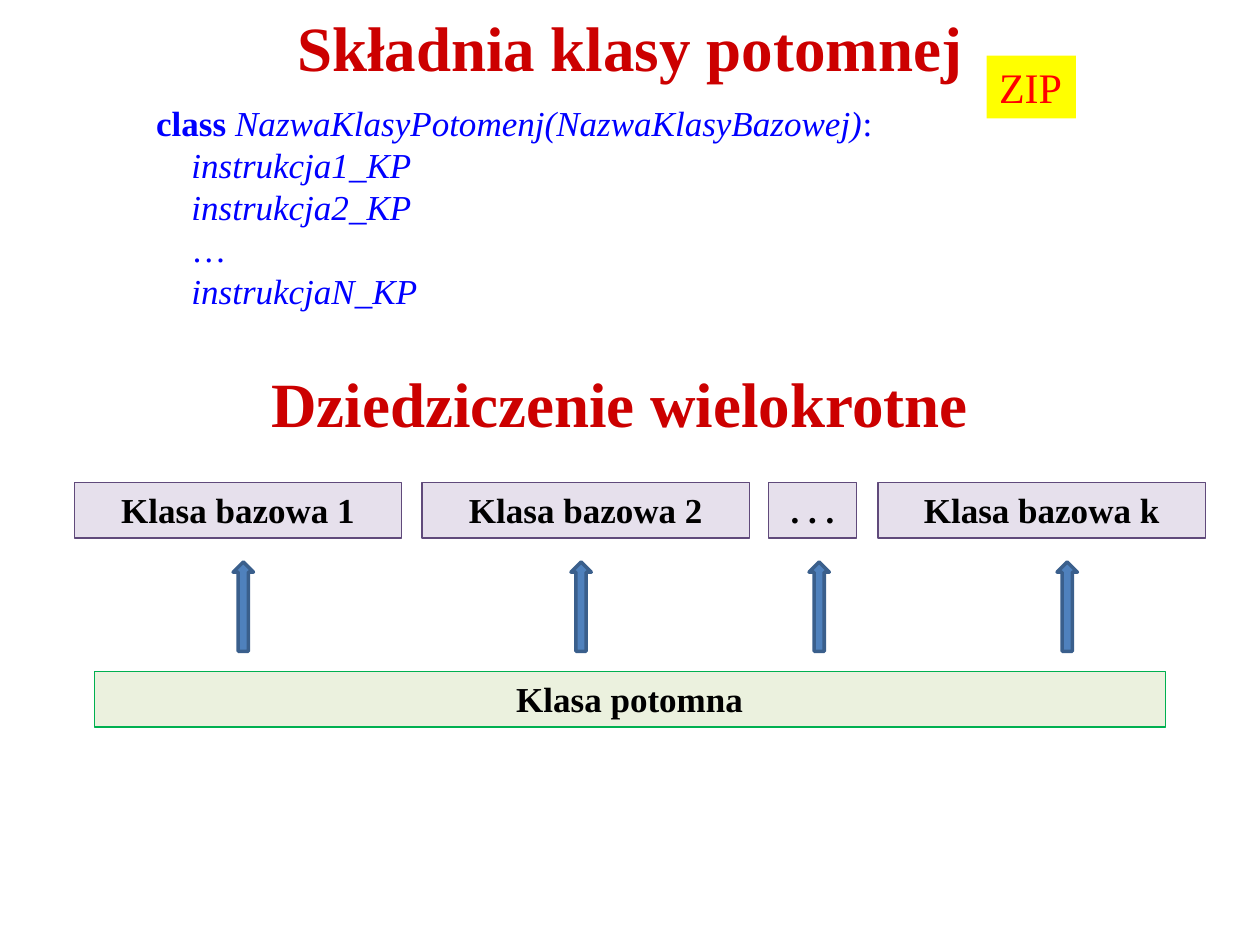
from lxml.etree import SubElement
from pptx import Presentation
from pptx.dml.color import RGBColor as RGB
from pptx.enum.shapes import MSO_SHAPE as Shape
from pptx.enum.text import MSO_ANCHOR as Anchor, PP_ALIGN as Align
from pptx.oxml.ns import qn
from pptx.util import Cm, Pt

RED = RGB(0xCC, 0x00, 0x00)
BRIGHT = RGB(0xFF, 0x00, 0x00)
BLUE = RGB(0x00, 0x00, 0xFF)
BLACK = RGB(0x00, 0x00, 0x00)
YELLOW = RGB(0xFF, 0xFF, 0x00)
LILAC = RGB(0xE6, 0xE0, 0xEC)
PURPLE = RGB(0x60, 0x4A, 0x7B)
PALE = RGB(0xEB, 0xF1, 0xDE)
GREEN = RGB(0x00, 0xB0, 0x50)
STEEL = RGB(0x4F, 0x81, 0xBD)
NAVY = RGB(0x3A, 0x5F, 0x8C)


def add_text(para, text, size=20, color=BLACK, bold=False, italic=False,
             font="Times New Roman"):
    run = para.add_run()
    run.text = text
    style = run.font
    style.name, style.size = font, Pt(size)
    style.bold, style.italic = bold, italic
    style.color.rgb = color


class Board:
    """Holds the current slide and its style."""

    def __init__(self, slide):
        self.shapes = slide.shapes

    def shape(self, kind, left, top, width, height, fill, line=None, weight=0.75):
        item = self.shapes.add_shape(kind, Cm(left), Cm(top), Cm(width), Cm(height))
        item.shadow.inherit = False
        item.fill.solid()
        item.fill.fore_color.rgb = fill
        if line is None:
            item.line.fill.background()
        else:
            item.line.color.rgb = line
            item.line.width = Pt(weight)
        return item

    def box(self, text, left, top, width, height=1.12, fill=LILAC, line=PURPLE,
            align=Align.CENTER, wrap=True, **style):
        frame = self.shape(Shape.RECTANGLE, left, top, width, height,
                           fill, line).text_frame
        frame.word_wrap = wrap
        frame.vertical_anchor = Anchor.TOP
        para = frame.paragraphs[0]
        para.alignment = align
        add_text(para, text, **style)

    def arrow(self, left, top):
        item = self.shape(Shape.UP_ARROW, left, top, 0.41, 1.8, STEEL, NAVY, 2)
        SubElement(item.line._get_or_add_ln(), qn("a:round"))

    def frame(self, left, top, width, height):
        area = self.shapes.add_textbox(Cm(left), Cm(top), Cm(width), Cm(height))
        area.text_frame.word_wrap = True
        area.text_frame.vertical_anchor = Anchor.MIDDLE
        return area.text_frame

    def title(self, text, left, top):
        para = self.frame(left, top, 21.59, 1.19).paragraphs[0]
        para.alignment = Align.CENTER
        add_text(para, text, size=36, color=RED, bold=True)

    def code(self, head, body, left, top, width, height):
        frame = self.frame(left, top, width, height)
        for text, style in head:
            add_text(frame.paragraphs[0], text, color=BLUE, **style)
        for text in body:
            para = frame.add_paragraph()
            para._p.get_or_add_pPr().set("marL", str(Cm(0.71)))
            add_text(para, text, color=BLUE, italic=text != "…")


def main():
    deck = Presentation()
    deck.slide_width, deck.slide_height = Cm(25.4), Cm(19.05)
    board = Board(deck.slides.add_slide(deck.slide_layouts[6]))

    # Syntax of a derived class
    board.title("Składnia klasy potomnej", 1.9, 0.33)
    board.code(
        [("class ", {"bold": True}),
         ("NazwaKlasyPotomenj(NazwaKlasyBazowej)", {"italic": True}),
         (":", {})],
        ["instrukcja1_KP", "instrukcja2_KP", "…", "instrukcjaN_KP"],
        2.9, 1.9, 17.6, 4.52)

    # Multiple inheritance: base classes, each with its arrow
    board.title("Dziedziczenie wielokrotne", 1.7, 7.52)
    bases = [("Klasa bazowa 1", 1.5, 6.6, 4.7),
             ("Klasa bazowa 2", 8.51, 6.6, 11.51),
             (". . .", 15.49, 1.78, 16.31),
             ("Klasa bazowa k", 17.7, 6.6, 21.31)]
    for name, left, width, tip in bases:
        board.box(name, left, 9.73, width, bold=True)
        board.arrow(tip, 11.33)

    # Derived class
    board.box("Klasa potomna", 1.9, 13.54, 21.59, fill=PALE, line=GREEN, bold=True)

    # Yellow tag
    board.box("ZIP", 19.89, 1.12, 1.8, 1.27, fill=YELLOW, line=None,
              align=Align.LEFT, wrap=False, size=24, color=BRIGHT)

    deck.save("out.pptx")


if __name__ == "__main__":
    main()
